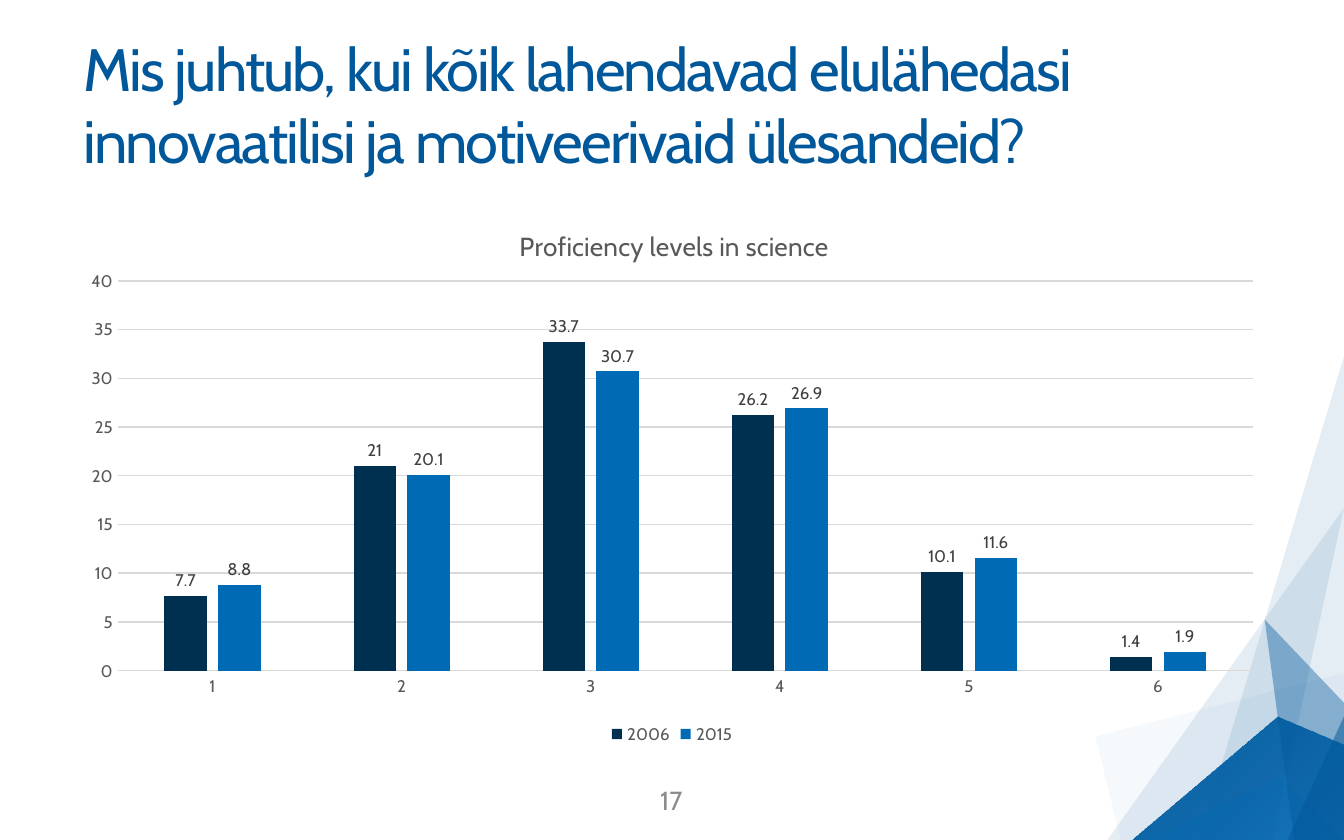
from lxml import etree
from pptx import Presentation
from pptx.chart.data import CategoryChartData
from pptx.dml.color import RGBColor
from pptx.enum.chart import XL_CHART_TYPE, XL_LABEL_POSITION, XL_LEGEND_POSITION, XL_TICK_MARK
from pptx.enum.text import MSO_ANCHOR, PP_ALIGN
from pptx.oxml.ns import qn
from pptx.util import Inches, Pt

COLUMN = XL_CHART_TYPE.COLUMN_CLUSTERED
OUTSIDE = XL_LABEL_POSITION.OUTSIDE_END
BOTTOM = XL_LEGEND_POSITION.BOTTOM
NO_TICK = XL_TICK_MARK.NONE
MIDDLE = MSO_ANCHOR.MIDDLE
LEFT, CENTER = PP_ALIGN.LEFT, PP_ALIGN.CENTER

FACE = "Cabin"
NAVY, BLUE = "00589A", "0068B4"
GRAY, RULE = "595959", "D9D9D9"

SHARDS = [
    (NAVY, 10, [(2, 0.15), (2, 3.75), (0.92, 3.75)]),
    (NAVY, 10, [(0.24, 3.75), (2, 1.28), (1.47, 3.75)]),
    (BLUE, 4, [(0.15, 2.98), (2, 2.51), (2, 3.51), (1.61, 3.75), (0.34, 3.75)]),
    (BLUE, 25, [(1.52, 3.28), (2, 3.75), (0.54, 3.75)]),
    (NAVY, 40, [(1.41, 2.11), (1.63, 3.75), (2, 3.75), (2, 2.73)]),
    (NAVY, 50, [(2, 2.83), (2, 3.75), (1.58, 3.75)]),
]
GEM = [(1.5, 2.83), (2, 3.04), (2, 3.75), (0.41, 3.75)]

LEVELS = ["1", "2", "3", "4", "5", "6"]
SERIES = [
    ("2006", "003050", [7.7, 21, 33.7, 26.2, 10.1, 1.4]),
    ("2015", "006BB4", [8.8, 20.1, 30.7, 26.9, 11.6, 1.9]),
]


def tint(color, code):
    color.rgb = RGBColor.from_string(code)


def assign(item, values):
    for name, value in values.items():
        setattr(item, name, value)


def style(font, size, code):
    assign(font, {"name": FACE, "size": Pt(size), "bold": False})
    tint(font.color, code)


def fade(node, share):
    etree.SubElement(node, qn("a:alpha"), val=str(share * 1000))


def add_shard(slide, box, points):
    spots = [(Inches(box[0] + x), Inches(box[1] + y)) for x, y in points]
    form = slide.shapes.build_freeform(*spots[0])
    form.add_line_segments(spots[1:], close=True)
    shape = form.convert_to_shape()
    shape.shadow.inherit = False
    shape.line.fill.background()
    return shape


def add_crystal(slide, box):
    gem = add_shard(slide, box, GEM)
    gem.fill.gradient()
    gem.fill.gradient_angle = 315
    for stop, code, spot in zip(gem.fill.gradient_stops, (NAVY, BLUE), (0, 1)):
        stop.position = spot
        tint(stop.color, code)
    fade(gem.element.findall(".//" + qn("a:srgbClr"))[-1], 84)
    for code, share, points in SHARDS:
        shard = add_shard(slide, box, points)
        shard.fill.solid()
        tint(shard.fill.fore_color, code)
        fade(shard.element.find(".//" + qn("a:srgbClr")), share)


def add_text(slide, box, text, size, code, align, space=0):
    frame = slide.shapes.add_textbox(*map(Inches, box)).text_frame
    assign(frame, {
        "word_wrap": True, "vertical_anchor": MIDDLE,
        "margin_left": Inches(0.12), "margin_right": Inches(0.12),
        "margin_top": Inches(0.06), "margin_bottom": Inches(0.06),
    })
    para = frame.paragraphs[0]
    para.alignment = align
    run = para.add_run()
    run.text = text
    style(run.font, size, code)
    if space:
        run.font._element.set("spc", str(space * 100))


def place(node, index, values, inner=False):
    for old in node.findall(qn("c:layout")):
        node.remove(old)
    layout = etree.Element(qn("c:layout"))
    manual = etree.SubElement(layout, qn("c:manualLayout"))
    if inner:
        etree.SubElement(manual, qn("c:layoutTarget"), val="inner")
    for key in ("x", "y"):
        etree.SubElement(manual, qn(f"c:{key}Mode"), val="edge")
    for key, value in values.items():
        etree.SubElement(manual, qn(f"c:{key}"), val=str(value))
    node.insert(index, layout)


def add_levels(slide, box):
    data = CategoryChartData()
    data.categories = LEVELS
    for name, code, values in SERIES:
        data.add_series(name, values)
    chart = slide.shapes.add_chart(COLUMN, *map(Inches, box), data).chart
    style(chart.font, 10, "000000")

    chart.has_title = True
    title = chart.chart_title
    title.text_frame.text = "Proficiency levels in science"
    style(title.text_frame.paragraphs[0].runs[0].font, 14, GRAY)
    place(title._element, 1, {"x": 0.37, "y": 0.05})
    area = chart.element.find(".//" + qn("c:plotArea"))
    place(area, 0, {"x": 0.042, "y": 0.153, "w": 0.938, "h": 0.704}, True)

    chart.has_legend = True
    assign(chart.legend, {"position": BOTTOM, "include_in_layout": False})
    style(chart.legend.font, 9, GRAY)

    for axis in (chart.category_axis, chart.value_axis):
        assign(axis, {"major_tick_mark": NO_TICK, "minor_tick_mark": NO_TICK})
        style(axis.tick_labels.font, 9, GRAY)
    scale = chart.value_axis
    assign(scale, {"minimum_scale": 0, "maximum_scale": 40, "major_unit": 5,
                   "has_major_gridlines": True})
    scale.format.line.fill.background()
    for line in (chart.category_axis.format.line, scale.major_gridlines.format.line):
        line.width = Pt(0.75)
        tint(line.color, RULE)

    plot = chart.plots[0]
    assign(plot, {"gap_width": 219, "overlap": -27, "vary_by_categories": False})
    for series, (name, code, values) in zip(plot.series, SERIES):
        series.format.fill.solid()
        tint(series.format.fill.fore_color, code)
        assign(series.data_labels, {"show_value": True, "position": OUTSIDE})
        style(series.data_labels.font, 9, "404040")


def main():
    deck = Presentation()
    assign(deck, {"slide_width": Inches(10), "slide_height": Inches(6.25)})
    slide = deck.slides.add_slide(deck.slide_layouts[6])
    add_crystal(slide, (8, 2.5))
    add_text(slide, (0.5, 0.25, 9, 1.04),
             "Mis juhtub, kui kõik lahendavad elulähedasi innovaatilisi ja motiveerivaid ülesandeid?",
             32, NAVY, LEFT, -1)
    add_text(slide, (3.83, 5.79, 2.33, 0.33), "17", 14, "8C8C8C", CENTER)
    add_levels(slide, (0.5, 1.46, 9, 4.12))
    deck.save("out.pptx")


if __name__ == "__main__":
    main()
